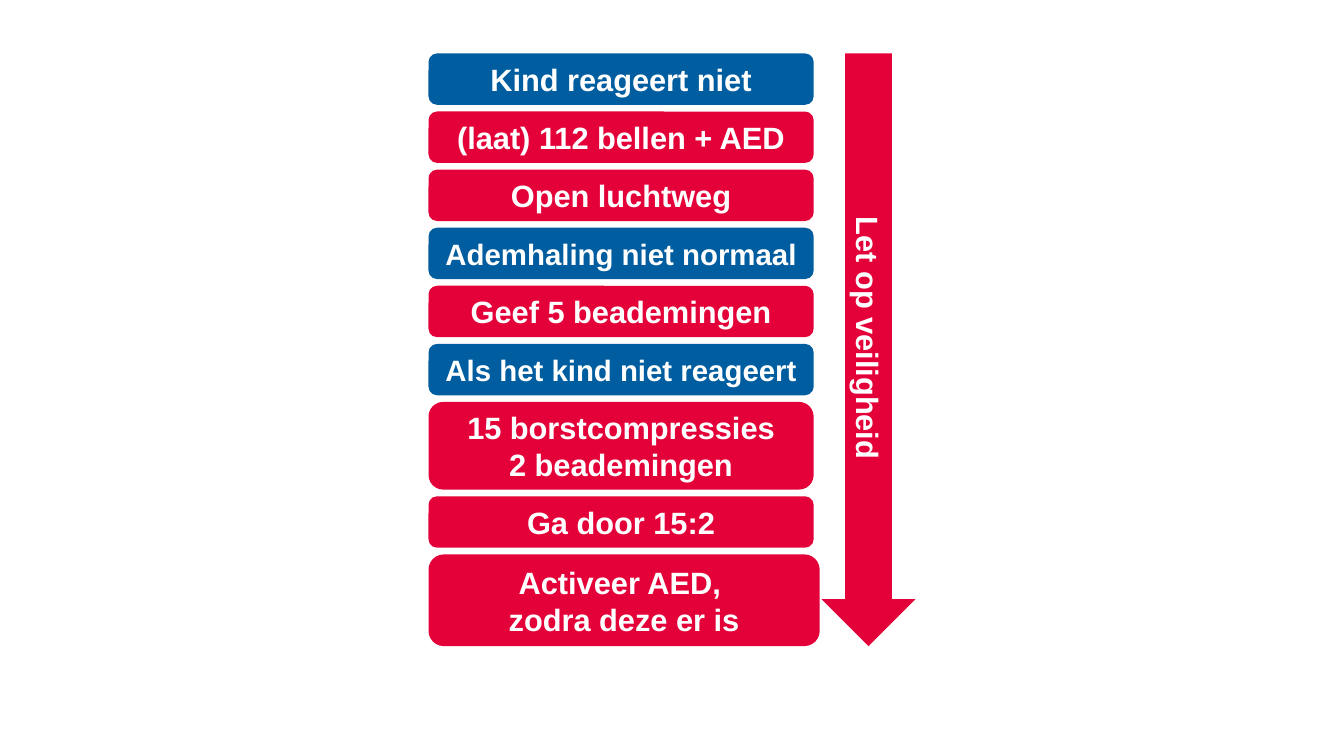
from dataclasses import dataclass

from pptx import Presentation
from pptx.dml.color import RGBColor
from pptx.enum.shapes import MSO_SHAPE
from pptx.enum.text import MSO_ANCHOR, PP_ALIGN
from pptx.util import Inches, Pt

ROUNDED = MSO_SHAPE.ROUNDED_RECTANGLE
DOWN_ARROW = MSO_SHAPE.DOWN_ARROW
MIDDLE = MSO_ANCHOR.MIDDLE
CENTER = PP_ALIGN.CENTER


@dataclass(frozen=True)
class Theme:
    font: str = "Arial"
    action: RGBColor = RGBColor(0xE4, 0x00, 0x38)
    check: RGBColor = RGBColor(0x00, 0x5D, 0x9F)
    text: RGBColor = RGBColor(0xFF, 0xFF, 0xFF)
    normal_size: int = 22
    tight_size: int = 21


THEME = Theme()


@dataclass(frozen=True)
class Step:
    text: str
    fill: RGBColor = THEME.action
    size: int = THEME.normal_size
    width: float = 3.82
    height: float = 0.51


STEPS = [
    Step("Kind reageert niet", THEME.check),
    Step("(laat) 112 bellen + AED"),
    Step("Open luchtweg"),
    Step("Ademhaling niet normaal", THEME.check, THEME.tight_size),
    Step("Geef 5 beademingen"),
    Step("Als het kind niet reageert", THEME.check, THEME.tight_size),
    Step("15 borstcompressies\n2 beademingen", height=0.87),
    Step("Ga door 15:2"),
    Step("Activeer AED, \nzodra deze er is", width=3.88, height=0.91),
]
SAFETY = Step("Let op veiligheid", width=0.93, height=5.88)
TOP = 0.53
STEP_LEFT = 4.25
ARROW_LEFT = 8.15


def draw_step(slide, step: Step, left: float, top: float, kind=ROUNDED):
    """Draw one filled shape with centred bold text."""
    box = slide.shapes.add_shape(
        kind, Inches(left), Inches(top), Inches(step.width), Inches(step.height)
    )
    box.shadow.inherit = False
    box.fill.solid()
    box.fill.fore_color.rgb = step.fill
    box.line.fill.background()
    frame = box.text_frame
    frame.word_wrap = True
    frame.vertical_anchor = MIDDLE
    frame.text = step.text
    for para in frame.paragraphs:
        para.alignment = CENTER
        for span in para.runs:
            span.font.name = THEME.font
            span.font.size = Pt(step.size)
            span.font.bold = True
            span.font.color.rgb = THEME.text
    return box


def draw_steps(slide) -> None:
    """Stack the steps with equal gaps over the height of the arrow."""
    free_height = SAFETY.height - sum(step.height for step in STEPS)
    gap = free_height / (len(STEPS) - 1)
    top = TOP
    for step in STEPS:
        draw_step(slide, step, STEP_LEFT, top)
        top += step.height + gap


def main() -> None:
    deck = Presentation()
    deck.slide_width = Inches(13.33)
    deck.slide_height = Inches(7.5)
    page = deck.slides.add_slide(deck.slide_layouts[6])

    # Resuscitation steps
    draw_steps(page)

    # Safety arrow with text turned to run downwards
    arrow = draw_step(page, SAFETY, ARROW_LEFT, TOP, DOWN_ARROW)
    arrow.text_frame._txBody.bodyPr.set("vert", "vert")

    deck.save("out.pptx")


if __name__ == "__main__":
    main()
